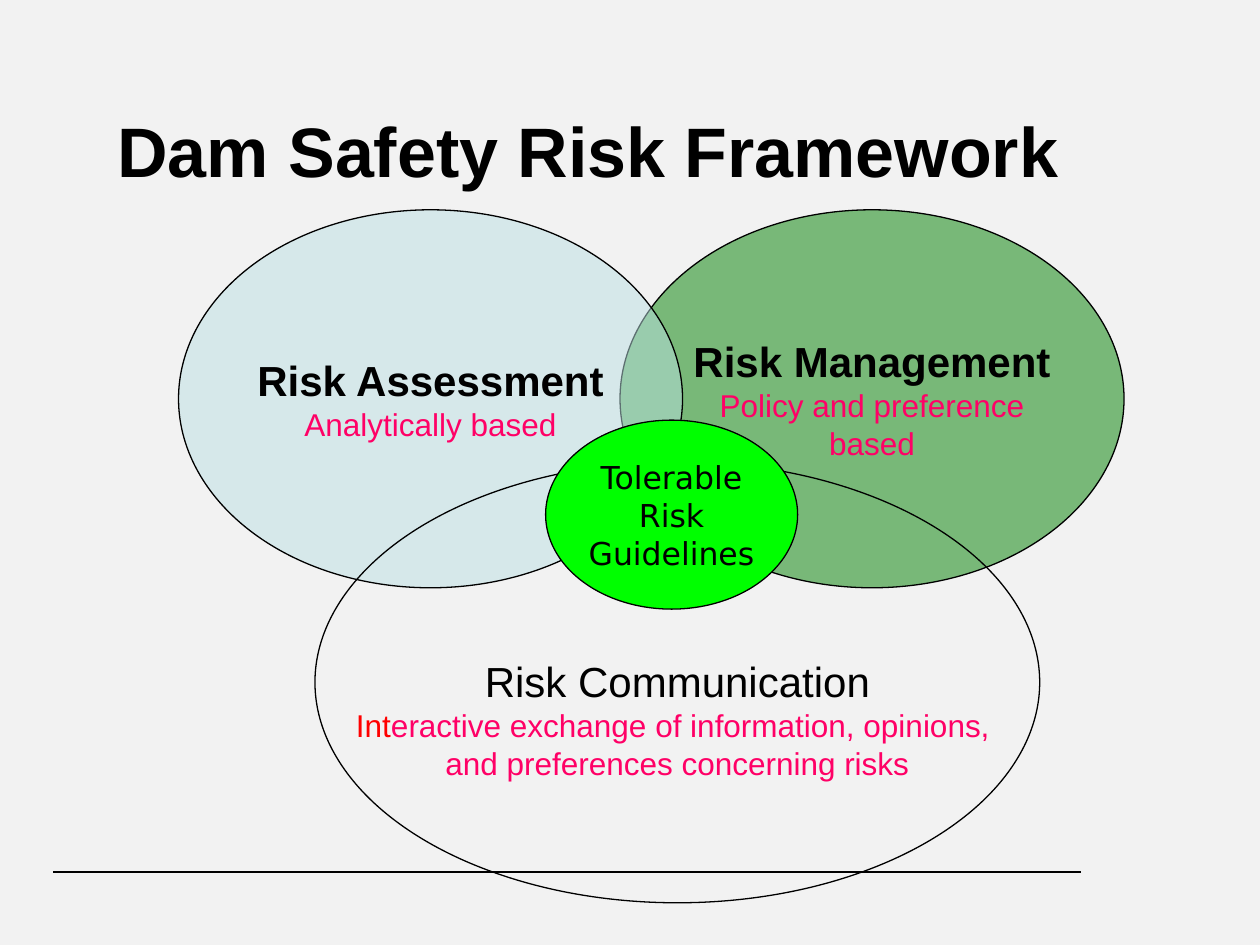
from lxml import etree
from pptx import Presentation
from pptx import util as u
from pptx.dml.color import RGBColor
from pptx.enum import shapes, text
from pptx.oxml.ns import qn

BLACK, PINK, RED = "000000", "FF0066", "FF0000"


def colour(value):
    return RGBColor.from_string(value)


class SlideBuilder:
    """Hold the style and the current slide, and draw each kind of element."""

    font = "Arial"
    line_width = u.Pt(0.75)

    def __init__(self, page, background):
        self.page = page
        fill = page.background.fill
        fill.solid()
        fill.fore_color.rgb = colour(background)

    def outline(self, line):
        line.color.rgb = colour(BLACK)
        line.width = self.line_width

    def add_text(self, frame, paragraphs, align, font=None):
        for index, spans in enumerate(paragraphs):
            para = frame.add_paragraph() if index else frame.paragraphs[0]
            para.alignment = align
            for words, size, shade, bold in spans:
                span = para.add_run()
                span.text = words
                span.font.name = font or self.font
                span.font.size = u.Pt(size)
                span.font.bold = bold
                span.font.color.rgb = colour(shade)

    def rule(self, left, right, top):
        line = self.page.shapes.add_connector(
            shapes.MSO_CONNECTOR.STRAIGHT, u.Cm(right), u.Cm(top), u.Cm(left), u.Cm(top))
        self.outline(line.line)
        etree.SubElement(line._element.spPr, qn("a:effectLst"))

    def ellipse(self, place, paragraphs, fill=None, opacity=100, font=None, inset_top=0.13):
        box = self.page.shapes.add_shape(
            shapes.MSO_SHAPE.OVAL, *(u.Cm(length) for length in place))
        box.shadow.inherit = False
        self.outline(box.line)
        if fill:
            box.fill.solid()
            box.fill.fore_color.rgb = colour(fill)
            if opacity < 100:
                shade = box._element.spPr.find(qn("a:solidFill"))[0]
                etree.SubElement(shade, qn("a:alpha"), val=str(opacity * 1000))
        else:
            box.fill.background()
        frame = box.text_frame
        frame.word_wrap = False
        frame.vertical_anchor = text.MSO_ANCHOR.MIDDLE
        frame.margin_top = u.Cm(inset_top)
        self.add_text(frame, paragraphs, text.PP_ALIGN.CENTER, font)

    def title(self, place, words):
        box = self.page.shapes.add_textbox(*(u.Cm(length) for length in place))
        frame = box.text_frame
        frame.word_wrap = True
        frame.margin_top = u.Cm(0.27)
        self.add_text(frame, [[(words, 40, BLACK, True)]], text.PP_ALIGN.LEFT)


def main():
    deck = Presentation()
    deck.slide_width, deck.slide_height = u.Cm(25.4), u.Cm(19.05)
    slide = SlideBuilder(deck.slides.add_slide(deck.slide_layouts[6]), "F2F2F2")

    slide.rule(1.07, 21.79, 17.58)
    slide.ellipse((12.5, 4.23, 10.16, 7.62), [
        [("Risk Management", 24, BLACK, True)],
        [("Policy and preference", 18, PINK, False)],
        [("based", 18, PINK, False)],
    ], "008000", 50)
    slide.ellipse((3.6, 4.23, 10.16, 7.62), [
        [("Risk Assessment", 24, BLACK, True)],
        [("Analytically based", 18, PINK, False)],
    ], "BBE0E3", 50)
    slide.ellipse((6.35, 9.31, 14.61, 8.89), [
        [("Risk Communication", 24, BLACK, False)],
        [("Int", 18, RED, False),
         ("eractive exchange of information, opinions, ", 18, PINK, False)],
        [("and preferences concerning risks", 18, PINK, False)],
    ], inset_top=1.59)
    slide.ellipse((11, 8.47, 5.08, 3.81), [
        [(word, 18, BLACK, False)] for word in ("Tolerable", "Risk", "Guidelines")
    ], "00FF00", font="DejaVu Sans")
    slide.title((2.12, 1.9, 23.28, 1.96), "Dam Safety Risk Framework")

    deck.save("out.pptx")


if __name__ == "__main__":
    main()
